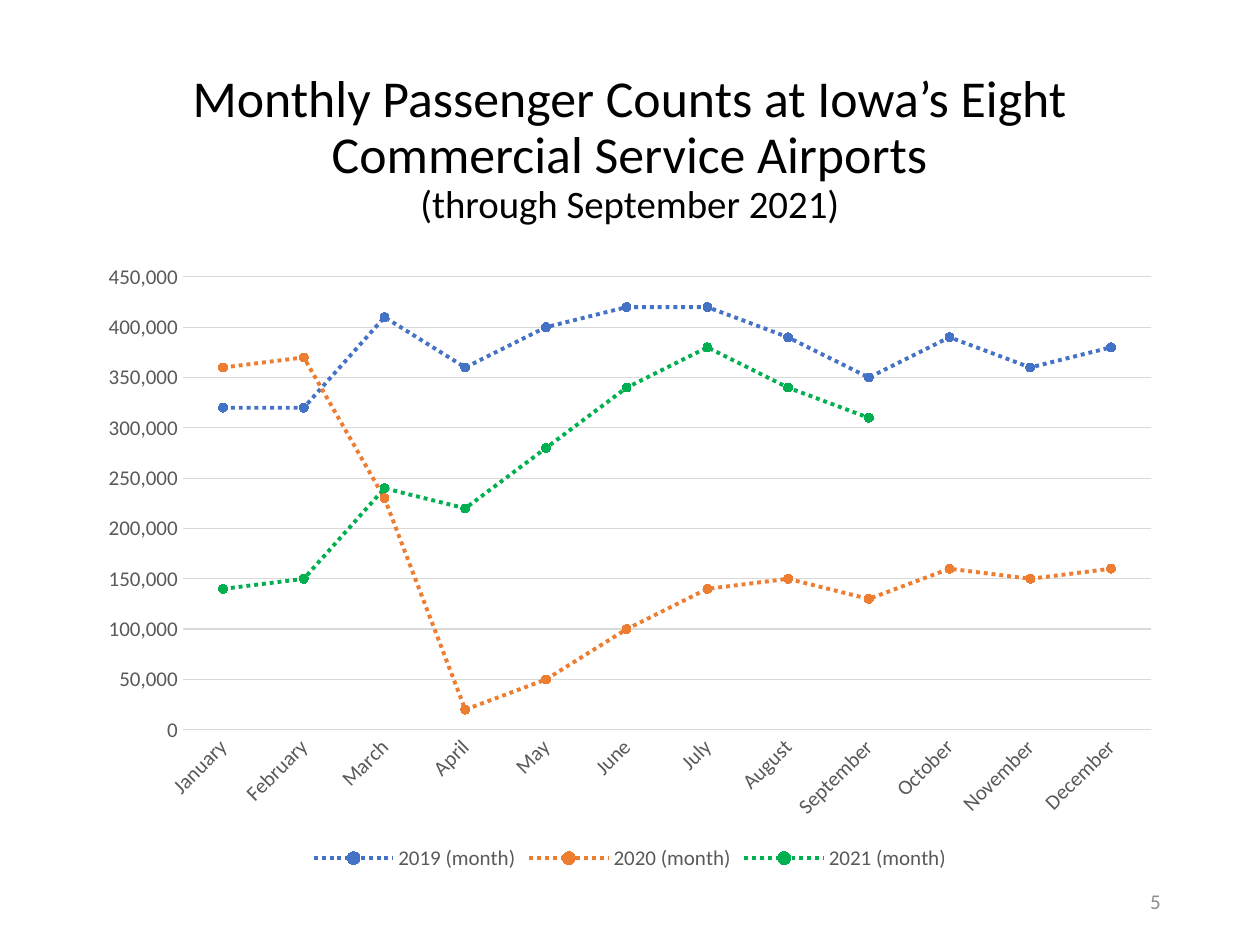
from pptx import Presentation, util as u
from pptx.chart.data import CategoryChartData
from pptx.dml.color import RGBColor
from pptx.enum import chart as ch, dml, text

BLACK = RGBColor(0, 0, 0)
GREY = RGBColor(0x59, 0x59, 0x59)
PALE = RGBColor(0x8C, 0x8C, 0x8C)
RULE = RGBColor(0xD9, 0xD9, 0xD9)
BLUE = RGBColor(0x44, 0x72, 0xC4)
ORANGE = RGBColor(0xED, 0x7D, 0x31)
GREEN = RGBColor(0x00, 0xB0, 0x50)

MONTHS = ["January", "February", "March", "April", "May", "June", "July",
          "August", "September", "October", "November", "December"]
# Passengers in thousands
YEARS = [
    ("2019 (month)", BLUE,
     [320, 320, 410, 360, 400, 420, 420, 390, 350, 390, 360, 380]),
    ("2020 (month)", ORANGE,
     [360, 370, 230, 20, 50, 100, 140, 150, 130, 160, 150, 160]),
    ("2021 (month)", GREEN,
     [140, 150, 240, 220, 280, 340, 380, 340, 310] + [None] * 3),
]


def apply(obj, **vals):
    for key, val in vals.items():
        setattr(obj, key, val)


class Page:
    """Holds the slide and its style; places are shares of the slide's size."""
    face = "Calibri"

    def __init__(self, deck):
        self.wide, self.high = deck.slide_width, deck.slide_height
        self.slide = deck.slides.add_slide(deck.slide_layouts[6])

    def box(self, x, y, w, h):
        return (int(x * self.wide), int(y * self.high),
                int(w * self.wide), int(h * self.high))

    def font(self, font, size, color):
        apply(font, name=self.face, size=u.Pt(size), bold=False)
        font.color.rgb = color

    def text(self, place, lines, color, align, anchor, gap=1.0):
        """Write lines given as (words, size) pairs, one paragraph each."""
        frame = self.slide.shapes.add_textbox(*self.box(*place)).text_frame
        apply(frame, word_wrap=True, vertical_anchor=anchor)
        for i, (words, size) in enumerate(lines):
            para = frame.add_paragraph() if i else frame.paragraphs[0]
            apply(para, alignment=align, line_spacing=gap)
            run = para.add_run()
            run.text = words
            self.font(run.font, size, color)

    def rule(self, line):
        line.color.rgb = RULE
        line.width = u.Pt(0.75)

    def chart(self, place, cats, rows):
        data = CategoryChartData(number_format="#,##0")
        data.categories = cats
        for name, _, vals in rows:
            data.add_series(name, [v and v * 1000 for v in vals])
        chart = self.slide.shapes.add_chart(
            ch.XL_CHART_TYPE.LINE_MARKERS, *self.box(*place), data).chart
        apply(chart, has_title=False, has_legend=True)
        self.font(chart.font, 10, BLACK)
        apply(chart.legend, position=ch.XL_LEGEND_POSITION.BOTTOM,
              include_in_layout=False)
        self.font(chart.legend.font, 12, GREY)
        self.axes(chart.category_axis, chart.value_axis)
        chart.plots[0].vary_by_categories = False
        for line, (_, color, _) in zip(chart.plots[0].series, rows):
            self.series(line, color)

    def axes(self, cat, val):
        for axis in (cat, val):
            apply(axis, major_tick_mark=ch.XL_TICK_MARK.NONE,
                  minor_tick_mark=ch.XL_TICK_MARK.NONE)
            self.font(axis.tick_labels.font, 12, GREY)
        cat.has_major_gridlines = False
        self.rule(cat.format.line)
        cat._element.txPr.bodyPr.set("rot", "-2700000")
        apply(val, minimum_scale=0, maximum_scale=450000, major_unit=50000,
              has_major_gridlines=True)
        apply(val.tick_labels, number_format="#,##0",
              number_format_is_linked=False)
        self.rule(val.major_gridlines.format.line)
        val.format.line.fill.background()

    def series(self, line, color):
        line.smooth = False
        pen = line.format.line
        pen.color.rgb = color
        apply(pen, width=u.Pt(2.25), dash_style=dml.MSO_LINE.ROUND_DOT)
        apply(line.marker, style=ch.XL_MARKER_STYLE.CIRCLE, size=5)
        form = line.marker.format
        form.fill.solid()
        form.fill.fore_color.rgb = color
        form.line.color.rgb = color


def main():
    deck = Presentation()
    apply(deck, slide_width=u.Inches(10), slide_height=u.Inches(7.5))
    page = Page(deck)
    left, width = 0.069, 0.862
    page.chart((left, 2 / 7.5, width, 0.66), MONTHS, YEARS)
    page.text((0.706, 6.95 / 7.5, 0.225, 0.4 / 7.5), [("5", 12)], PALE,
              text.PP_ALIGN.RIGHT, text.MSO_ANCHOR.MIDDLE)
    page.text((left, 0.4 / 7.5, width, 1.45 / 7.5),
              [("Monthly Passenger Counts at Iowa’s Eight "
                "Commercial Service Airports", 29.6),
               ("(through September 2021)", 22.2)], BLACK,
              text.PP_ALIGN.CENTER, text.MSO_ANCHOR.BOTTOM, 0.9)
    deck.save("out.pptx")


if __name__ == "__main__":
    main()
